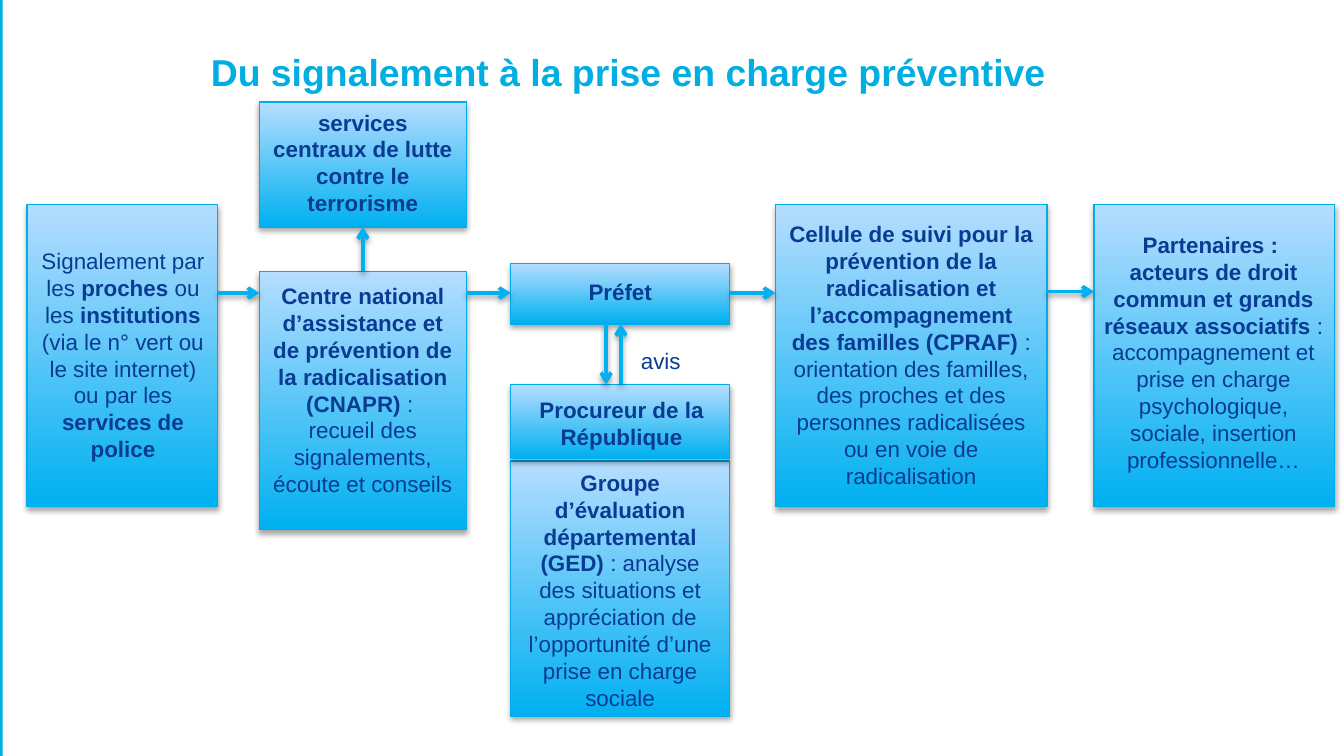
import dataclasses

import lxml.etree
import pptx
import pptx.dml.color
import pptx.enum.shapes
import pptx.enum.text
import pptx.oxml.ns
import pptx.util

Inches = pptx.util.Inches
Pt = pptx.util.Pt


@dataclasses.dataclass(frozen=True)
class Theme:
    """Colours and type sizes of the deck."""
    accent: str = "00AEE1"
    border: str = "00ACEB"
    deep: str = "00B0F0"
    pale: str = "B5DDFF"
    ink: str = "0A3B93"
    font: str = "Arial"
    title_size: int = 20
    body_size: int = 12


@dataclasses.dataclass(frozen=True)
class Box:
    """A rectangle in inches."""
    left: float
    top: float
    width: float
    height: float

    @property
    def right(self):
        """Return the right edge."""
        return self.left + self.width

    @property
    def bottom(self):
        """Return the bottom edge."""
        return self.top + self.height

    @property
    def middle(self):
        """Return the horizontal centre."""
        return self.left + self.width / 2

    def inner(self, left, top, width, height):
        """Return a box placed relative to this one."""
        return Box(self.left + left, self.top + top, width, height)

    def lengths(self):
        """Return the four measures as lengths."""
        return [Inches(value) for value in (self.left, self.top, self.width, self.height)]


THEME = Theme()

SLIDE = Box(0, 0, 10, 10 * 9 / 16)
REPORT = Box(0.2, 1.52, 1.42, 2.25)
CENTRE = Box(1.93, 2.02, 1.54, 1.92)
SERVICES = Box(1.93, 0.76, 1.54, 0.93)
GROUP = Box(3.8, 3.43, 1.63, 1.9)
PROSECUTOR = Box(3.8, 2.86, 1.63, 0.55)
PREFECT = Box(3.8, 1.96, 1.63, 0.45)
UNIT = Box(5.77, 1.52, 2.02, 2.25)
PARTNERS = Box(8.14, 1.52, 1.79, 2.25)

STAGES = [
    (GROUP, (0, 0.01, 1.63, 1.92), [
        [("Groupe d’évaluation départemental (GED) ", True),
         (": analyse des situations et appréciation de l’opportunité "
          "d’une prise en charge sociale", False)]]),
    (PROSECUTOR, (0.04, 0.04, 1.57, 0.5), [[("Procureur de la République", True)]]),
    (REPORT, (-0.03, 0.27, 1.49, 1.72), [
        [("Signalement par les ", False), ("proches ", True), ("ou les ", False),
         ("institutions", True),
         (" (via le n° vert ou le site internet) ou par les ", False),
         ("services de police", True)]]),
    (CENTRE, (0, 0.03, 1.54, 1.72), [
        [("Centre national d’assistance et de prévention de la radicalisation (CNAPR) ", True),
         (": ", False)],
        [("recueil des signalements, écoute et conseils", False)]]),
    (PREFECT, (0.16, 0.06, 1.31, 0.3), [[("Préfet", True)]]),
    (SERVICES, (0, 0, 1.54, 0.92), [
        [("services centraux de lutte contre le terrorisme", True)]]),
    (UNIT, (0, 0.07, 2.02, 2.12), [
        [("Cellule de suivi pour la prévention de la radicalisation et "
          "l’accompagnement des familles (CPRAF) ", True), (": ", False)],
        [("orientation des familles, des proches et des personnes radicalisées "
          "ou en voie de radicalisation", False)]]),
    (PARTNERS, (-0.04, 0.15, 1.86, 1.92), [
        [("Partenaires : ", True)],
        [("acteurs de droit commun et grands réseaux associatifs ", True),
         (": accompagnement et prise en charge psychologique, sociale, "
          "insertion professionnelle…", False)]]),
]


def colour(value):
    """Turn a hex string into a colour."""
    return pptx.dml.color.RGBColor.from_string(value)


def add_shadow(shape, opacity, distance):
    """Give a shape or connector a soft shadow straight below it."""
    properties = shape._element.spPr
    for old in properties.findall(pptx.oxml.ns.qn("a:effectLst")):
        properties.remove(old)
    properties.append(lxml.etree.fromstring(
        f'<a:effectLst {pptx.oxml.ns.nsdecls("a")}>'
        f'<a:outerShdw blurRad="{Pt(3.1)}" dist="{Pt(distance)}" dir="5400000" rotWithShape="0">'
        f'<a:srgbClr val="000000"><a:alpha val="{opacity * 1000}"/></a:srgbClr>'
        '</a:outerShdw></a:effectLst>'))


def add_rectangle(page, box):
    """Add a rectangle without shadow."""
    shape = page.shapes.add_shape(pptx.enum.shapes.MSO_SHAPE.RECTANGLE, *box.lengths())
    shape.shadow.inherit = False
    return shape


def add_text(page, box, paragraphs, size, tone, align=None, spacing=None):
    """Add a wrapped text box."""
    frame = page.shapes.add_textbox(*box.lengths()).text_frame
    frame.word_wrap = True
    for index, spans in enumerate(paragraphs):
        para = frame.paragraphs[0] if index == 0 else frame.add_paragraph()
        para.alignment = align
        para.line_spacing = spacing
        para.font.name = THEME.font
        para.font.size = Pt(size)
        para.font.color.rgb = colour(tone)
        for text, bold in spans:
            span = para.add_run()
            span.text = text
            span.font.bold = bold


def add_stage(page, box, area, paragraphs):
    """Draw one shaded stage with its centred text."""
    shape = add_rectangle(page, box)
    shape.fill.gradient()
    shape.fill.gradient_angle = 90
    for stop, tone in zip(shape.fill.gradient_stops, (THEME.deep, THEME.pale)):
        stop.color.rgb = colour(tone)
    shape.line.color.rgb = colour(THEME.border)
    shape.line.width = Pt(0.75)
    add_shadow(shape, 35, 1.8)
    add_text(page, box.inner(*area), paragraphs, THEME.body_size, THEME.ink,
             pptx.enum.text.PP_ALIGN.CENTER)


def add_arrow(page, start, end):
    """Draw an arrow between two points."""
    arrow = page.shapes.add_connector(
        pptx.enum.shapes.MSO_CONNECTOR.STRAIGHT, *map(Inches, (*start, *end)))
    arrow.line.color.rgb = colour(THEME.deep)
    arrow.line.width = Pt(2)
    head = lxml.etree.SubElement(arrow.line._get_or_add_ln(), pptx.oxml.ns.qn("a:tailEnd"))
    head.set("type", "arrow")
    add_shadow(arrow, 38, 1.6)


def add_header(page, box):
    """Draw the edge band and the title."""
    band = add_rectangle(page, box.inner(-0.03, 0, 0.05, box.height))
    band.fill.solid()
    band.fill.fore_color.rgb = colour(THEME.accent)
    band.line.fill.background()
    add_text(page, box.inner(1.47, 0.23, 8.18, 0.65),
             [[("Du signalement à la prise en charge préventive", True)]],
             THEME.title_size, THEME.accent, spacing=Pt(30))


def add_links(page):
    """Join the stages with arrows and label the exchange of opinions."""
    chain = [(REPORT, CENTRE, 2.18), (CENTRE, PREFECT, 2.18),
             (PREFECT, UNIT, 2.18), (UNIT, PARTNERS, 2.17)]
    for source, target, level in chain:
        add_arrow(page, (source.right, level), (target.left, level))
    add_arrow(page, (CENTRE.middle, CENTRE.top), (CENTRE.middle, SERVICES.bottom))
    down, up = PREFECT.left + 0.71, PREFECT.left + 0.82
    add_arrow(page, (down, PREFECT.bottom), (down, PROSECUTOR.top))
    add_arrow(page, (up, PROSECUTOR.top), (up, PREFECT.bottom))
    add_text(page, PREFECT.inner(0.87, 0.47, 0.6, 0.41), [[("avis", False)]],
             THEME.body_size, THEME.ink, spacing=Pt(22))


def main():
    """Build and save the deck."""
    deck = pptx.Presentation()
    deck.slide_width, deck.slide_height = Inches(SLIDE.width), Inches(SLIDE.height)
    page = deck.slides.add_slide(deck.slide_layouts[6])
    add_header(page, SLIDE)
    for box, area, paragraphs in STAGES:
        add_stage(page, box, area, paragraphs)
    add_links(page)
    deck.save("out.pptx")


if __name__ == "__main__":
    main()
